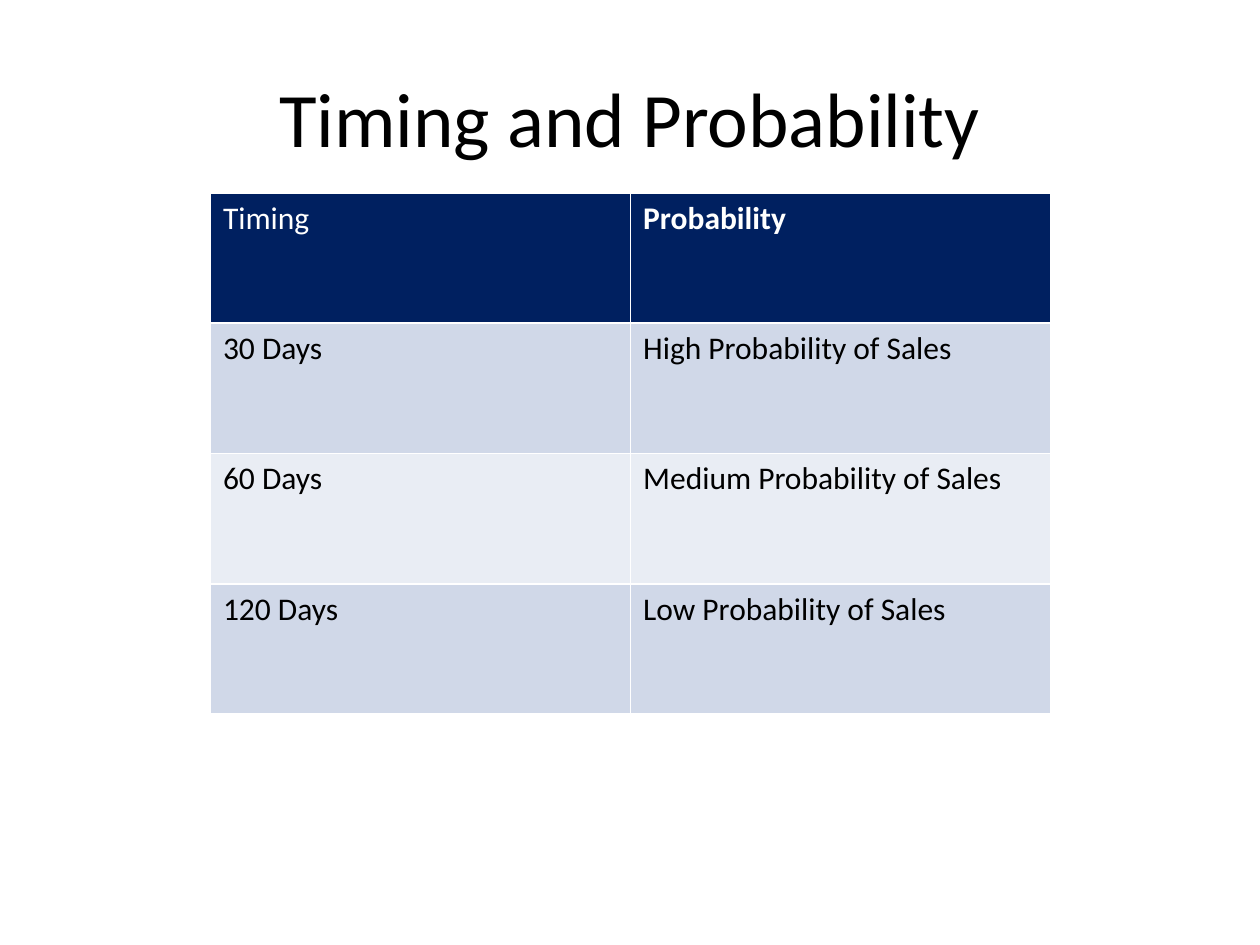
from dataclasses import dataclass

from pptx import Presentation
from pptx.dml.color import RGBColor
from pptx.enum.text import MSO_ANCHOR, PP_ALIGN
from pptx.slide import Slide
from pptx.util import Inches, Pt

CENTER = PP_ALIGN.CENTER
MIDDLE = MSO_ANCHOR.MIDDLE


@dataclass(frozen=True)
class Theme:
    font: str = "Calibri"
    title_size: int = 44
    cell_size: int = 18
    ink: str = "000000"
    header_ink: str = "FFFFFF"
    header_fill: str = "002060"
    bands: tuple[str, str] = ("D0D8E8", "E9EDF4")


@dataclass(frozen=True)
class Row:
    timing: str
    probability: str


THEME = Theme()
HEADER = Row("Timing", "Probability")
ROWS = [
    Row("30 Days", "High Probability of Sales"),
    Row("60 Days", "Medium Probability of Sales"),
    Row("120 Days", "Low Probability of Sales"),
]


def write(tf, text: str, size: int, color: str, bold: bool = False) -> None:
    tf.text = text
    font = tf.paragraphs[0].runs[0].font
    font.name = THEME.font
    font.size = Pt(size)
    font.bold = bold
    font.color.rgb = RGBColor.from_string(color)


def add_title(s: Slide, text: str) -> None:
    tf = s.shapes.add_textbox(Inches(0.5), Inches(0.3), Inches(9), Inches(1.25)).text_frame
    tf.word_wrap = True
    tf.vertical_anchor = MIDDLE
    write(tf, text, THEME.title_size, THEME.ink)
    tf.paragraphs[0].alignment = CENTER


def fill_row(table, index: int, row: Row) -> None:
    is_header = index == 0
    fill = THEME.header_fill if is_header else THEME.bands[(index - 1) % 2]
    ink = THEME.header_ink if is_header else THEME.ink
    for col, text in enumerate((row.timing, row.probability)):
        cell = table.cell(index, col)
        cell.fill.solid()
        cell.fill.fore_color.rgb = RGBColor.from_string(fill)
        write(cell.text_frame, text, THEME.cell_size, ink, bold=is_header and col == 1)


def add_probability_table(s: Slide) -> None:
    rows = [HEADER, *ROWS]
    table = s.shapes.add_table(
        len(rows), 2, Inches(1.67), Inches(1.53), Inches(6.67), Inches(4.14)
    ).table
    for index, row in enumerate(rows):
        fill_row(table, index, row)


def main() -> None:
    prs = Presentation()
    prs.slide_width = Inches(10)
    prs.slide_height = Inches(7.5)
    s = prs.slides.add_slide(prs.slide_layouts[6])
    add_title(s, "Timing and Probability")
    add_probability_table(s)
    prs.save("out.pptx")


if __name__ == "__main__":
    main()
